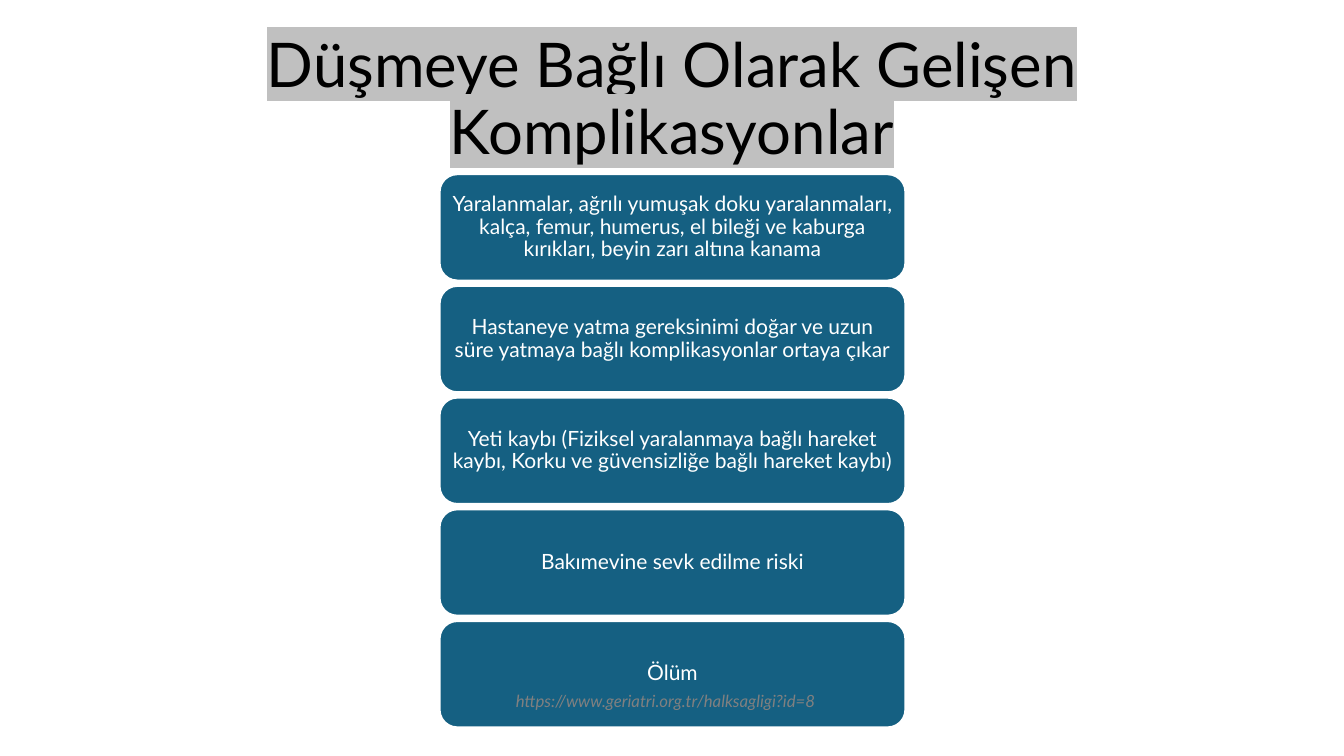
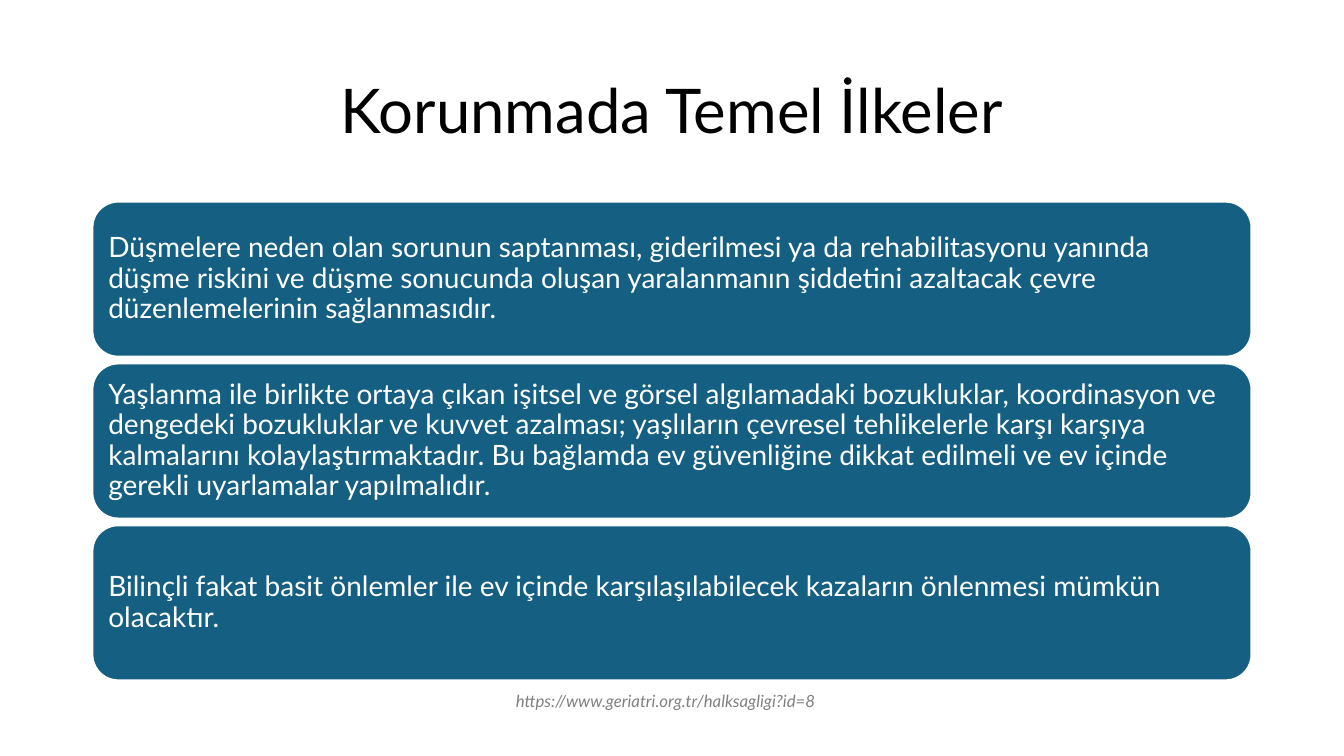
from lxml.etree import SubElement
from pptx import Presentation
from pptx.dml.color import RGBColor
from pptx.enum.shapes import MSO_SHAPE
from pptx.enum.text import MSO_ANCHOR, MSO_AUTO_SIZE, PP_ALIGN
from pptx.oxml.ns import qn
from pptx.util import Pt

COLORS = {
    "title": "000000",
    "highlight": "C0C0C0",
    "box": "156082",
    "box_text": "FFFFFF",
    "box_line": "FFFFFF",
    "source": "808080",
}
FONT = "Lato"
SOURCE = "https://www.geriatri.org.tr/halksagligi?id=8"

SLIDES = [
    {
        "title": "Düşmeye Bağlı Olarak Gelişen Komplikasyonlar",
        "title_top": 20,
        "highlighted": True,
        "left": 314, "top": 124.4, "width": 332.8, "height": 76, "gap": 3.8,
        "size": 15, "align": PP_ALIGN.CENTER, "margins": (4.5, 2.25),
        "boxes": [
            "Yaralanmalar, ağrılı yumuşak doku yaralanmaları, kalça, femur, humerus, "
            "el bileği ve kaburga kırıkları, beyin zarı altına kanama",
            "Hastaneye yatma gereksinimi doğar ve uzun süre yatmaya bağlı "
            "komplikasyonlar ortaya çıkar",
            "Yeti kaybı (Fiziksel yaralanmaya bağlı hareket kaybı, Korku ve "
            "güvensizliğe bağlı hareket kaybı)",
            "Bakımevine sevk edilme riski",
            "Ölüm",
        ],
    },
    {
        "title": "Korunmada Temel İlkeler",
        "title_top": 28.8,
        "highlighted": False,
        "left": 66, "top": 144, "width": 828, "height": 110.8, "gap": 4.8,
        "size": 20, "align": PP_ALIGN.LEFT, "margins": (6, 6),
        "boxes": [
            "Düşmelere neden olan sorunun saptanması, giderilmesi ya da "
            "rehabilitasyonu yanında düşme riskini ve düşme sonucunda oluşan "
            "yaralanmanın şiddetini azaltacak çevre düzenlemelerinin sağlanmasıdır.",
            "Yaşlanma ile birlikte ortaya çıkan işitsel ve görsel algılamadaki "
            "bozukluklar, koordinasyon ve dengedeki bozukluklar ve kuvvet azalması; "
            "yaşlıların çevresel tehlikelerle karşı karşıya kalmalarını "
            "kolaylaştırmaktadır. Bu bağlamda ev güvenliğine dikkat edilmeli ve ev "
            "içinde gerekli uyarlamalar yapılmalıdır.",
            "Bilinçli fakat basit önlemler ile ev içinde karşılaşılabilecek "
            "kazaların önlenmesi mümkün olacaktır.",
        ],
    },
]


def write_text(shape, text, size, color, align, spacing=0.9):
    frame = shape.text_frame
    frame.word_wrap = True
    frame.vertical_anchor = MSO_ANCHOR.MIDDLE
    paragraph = frame.paragraphs[0]
    paragraph.alignment = align
    paragraph.line_spacing = spacing
    run = paragraph.add_run()
    run.text = text
    run.font.size = Pt(size)
    run.font.color.rgb = RGBColor.from_string(COLORS[color])
    run.font.name = FONT
    return run


def highlight(run, color):
    properties = run._r.get_or_add_rPr()
    marker = SubElement(properties, qn("a:highlight"))
    SubElement(marker, qn("a:srgbClr")).set("val", COLORS[color])
    properties.find(qn("a:solidFill")).addnext(marker)


presentation = Presentation()
presentation.slide_width = Pt(960)
presentation.slide_height = Pt(540)

for content in SLIDES:
    slide = presentation.slides.add_slide(presentation.slide_layouts[6])

    title = slide.shapes.add_textbox(Pt(66), Pt(content["title_top"]), Pt(828), Pt(104.4))
    title_run = write_text(title, content["title"], 44, "title", PP_ALIGN.CENTER)
    if content["highlighted"]:
        highlight(title_run, "highlight")

    horizontal, vertical = content["margins"]
    for index, text in enumerate(content["boxes"]):
        top = content["top"] + index * (content["height"] + content["gap"])
        box = slide.shapes.add_shape(
            MSO_SHAPE.ROUNDED_RECTANGLE,
            Pt(content["left"]), Pt(top), Pt(content["width"]), Pt(content["height"]),
        )
        box.shadow.inherit = False
        box.fill.solid()
        box.fill.fore_color.rgb = RGBColor.from_string(COLORS["box"])
        box.line.color.rgb = RGBColor.from_string(COLORS["box_line"])
        box.line.width = Pt(1.5)
        frame = box.text_frame
        frame.margin_left = frame.margin_right = Pt(horizontal)
        frame.margin_top = frame.margin_bottom = Pt(vertical)
        write_text(box, text, content["size"], "box_text", content["align"])

    source = slide.shapes.add_textbox(Pt(361.4), Pt(489.6), Pt(236.9), Pt(21.8))
    source_run = write_text(source, SOURCE, 12, "source", PP_ALIGN.LEFT, 1.0)
    source_run.font.italic = True
    source.text_frame.word_wrap = False
    source.text_frame.vertical_anchor = MSO_ANCHOR.TOP
    source.text_frame.auto_size = MSO_AUTO_SIZE.SHAPE_TO_FIT_TEXT

presentation.save("out.pptx")
